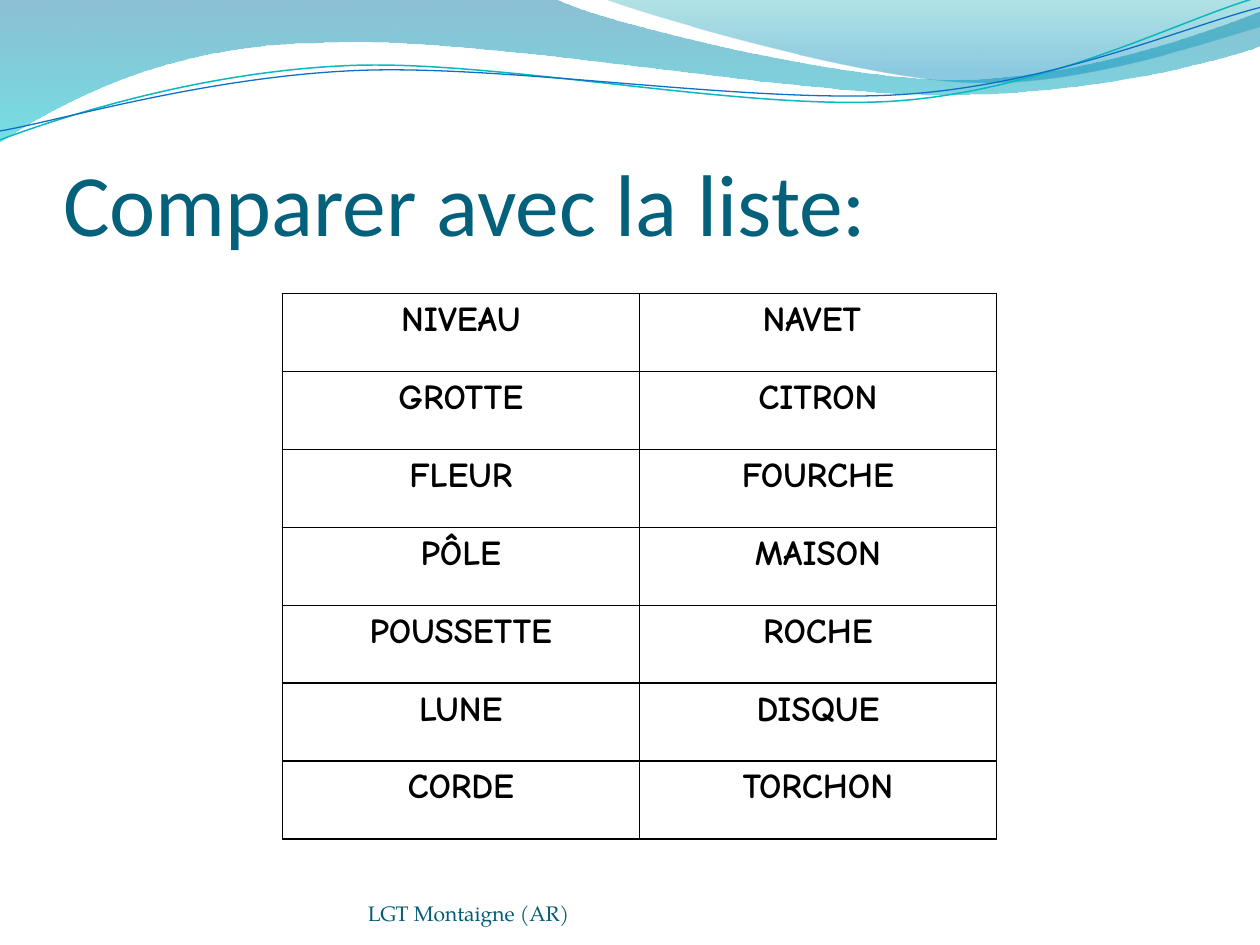
from math import cos, radians, sin

from lxml.etree import SubElement
from pptx import Presentation
from pptx.dml.color import RGBColor
from pptx.enum.text import MSO_ANCHOR, MSO_AUTO_SIZE, PP_ALIGN
from pptx.oxml.ns import qn
from pptx.util import Inches, Pt

BLACK = RGBColor(0, 0, 0)
TITLE_INK = RGBColor(0x04, 0x61, 0x7B)
FOOT_INK = RGBColor(0x04, 0x5D, 0x75)
BLUE = RGBColor(0x00, 0x74, 0xA1)
CYAN = RGBColor(0x00, 0xC6, 0xCF)
TEAL = RGBColor(0x00, 0xA1, 0xA9)
SKY = RGBColor(0x00, 0x8B, 0xBF)
AQUA = RGBColor(0x0A, 0xB8, 0xBF)
ROYAL = RGBColor(0x0F, 0x6F, 0xC6)

TITLE = "Comparer avec la liste:"
FOOTER = "LGT Montaigne (AR)"
WORDS = [
    ("NIVEAU", "NAVET "),
    ("GROTTE", "CITRON"),
    ("FLEUR", "FOURCHE"),
    ("PÔLE", "MAISON"),
    ("POUSSETTE", "ROCHE"),
    ("LUNE", "DISQUE"),
    ("CORDE", "TORCHON"),
]

# Each path is a start point, then line ends (2 numbers) or curves (6 numbers).
# Each gradient stop is position, colour, opacity in percent.
WAVES = [
    ([(0, -0.01), (4.4, -0.01), (4.76, 0.17, 6.64, 0.63, 7.58, 0.63),
      (8.53, 0.63, 9.58, 0.26, 10, 0.09), (10.01, 0.36),
      (9.83, 0.44, 8.7, 0.76, 7.46, 0.75), (6.22, 0.75, 3.82, 0.28, 2.57, 0.34),
      (1.29, 0.35, 0.46, 0.83, -0.01, 1.13), (0, -0.01)],
     [(0, BLUE, 45), (1, CYAN, 55)]),
    ([(4.79, -0.01), (5.09, 0.11, 6.82, 0.62, 7.69, 0.65),
      (8.56, 0.69, 9.61, 0.32, 10, 0.21), (10, 0), (4.79, -0.01)],
     [(0, TEAL, 30), (0.8, SKY, 45)]),
]
# Path, centre of its turned frame, colour, width.
STROKES = [
    ([(0, 1.11), (0.48, 0.93, 1.58, 0.57, 2.77, 0.52),
      (3.95, 0.47, 5.93, 0.89, 7.13, 0.8), (8.33, 0.71, 9.38, 0.15, 9.98, -0.02)],
     (4.99, 0.58), AQUA, 0.85),
    ([(0, 1.04), (0.47, 0.96, 1.64, 0.61, 2.83, 0.56),
      (4.03, 0.51, 5.97, 0.83, 7.17, 0.75), (8.36, 0.67, 9.41, 0.21, 10, 0.06)],
     (5, 0.59), ROYAL, 0.75),
]
TILT = 2.7


def pairs(seg):
    return list(zip(seg[::2], seg[1::2]))


def turn(path, mid):
    """Turn a path clockwise by TILT degrees about mid."""
    c, s = cos(radians(TILT)), sin(radians(TILT))
    result = []
    for seg in path:
        moved = []
        for x, y in pairs(seg):
            dx, dy = x - mid[0], y - mid[1]
            moved += [mid[0] + dx * c - dy * s, mid[1] + dx * s + dy * c]
        result.append(moved)
    return result


def draw(shapes, path, close):
    """Build the outline from lines, then join each curve's three points."""
    points = [(Inches(x), Inches(y)) for seg in path for x, y in pairs(seg)]
    pen = shapes.build_freeform(*points[0])
    pen.add_line_segments(points[1:], close=close)
    shape = pen.convert_to_shape()
    shape.shadow.inherit = False
    lines = iter(list(shape.element.spPr.iter(qn("a:lnTo"))))
    for seg in path[1:]:
        first = next(lines)
        if len(seg) == 6:
            first.tag = qn("a:cubicBezTo")
            for _ in range(2):
                other = next(lines)
                first.append(other[0])
                other.getparent().remove(other)
    return shape


def add_wave(shapes, path, stops):
    wave = draw(shapes, path, True)
    wave.line.fill.background()
    wave.fill.gradient()
    wave.fill.gradient_angle = 270
    for stop, (place, color, alpha) in zip(wave.fill.gradient_stops, stops):
        stop.position = place
        stop.color.rgb = color
    tints = wave.element.spPr.iter(qn("a:srgbClr"))
    for tint, (_, _, alpha) in zip(tints, stops):
        SubElement(tint, qn("a:alpha"), val=str(alpha * 1000))


def add_stroke(shapes, path, mid, color, width):
    curve = draw(shapes, turn(path, mid), False)
    curve.rotation = 360 - TILT
    curve.fill.background()
    curve.line.color.rgb = color
    curve.line.width = Pt(width)


def set_frame(frame, top=0):
    frame.word_wrap = True
    frame.auto_size = MSO_AUTO_SIZE.NONE
    frame.vertical_anchor = MSO_ANCHOR.BOTTOM
    frame.margin_left = frame.margin_right = frame.margin_bottom = 0
    frame.margin_top = Inches(top)


def set_font(par, name, size, color, bold=False):
    font = par.font
    font.name, font.size, font.bold = name, Pt(size), bold
    font.color.rgb = color


def add_border(cell):
    props = cell._tc.get_or_add_tcPr()
    for i, side in enumerate(("lnL", "lnR", "lnT", "lnB")):
        line = props.makeelement(qn("a:" + side), {"w": str(Pt(1))})
        fill = SubElement(line, qn("a:solidFill"))
        SubElement(fill, qn("a:srgbClr"), val=str(BLACK))
        props.insert(i, line)


def add_words(shapes):
    rows, cols = len(WORDS), len(WORDS[0])
    table = shapes.add_table(rows, cols, Inches(2.24), Inches(2.33),
                             Inches(5.67), Inches(4.33)).table
    table.first_row = table.horz_banding = False
    for r, row in enumerate(WORDS):
        for c, word in enumerate(row):
            cell = table.cell(r, c)
            cell.text = word
            cell.fill.background()
            par = cell.text_frame.paragraphs[0]
            par.alignment = PP_ALIGN.CENTER
            set_font(par, "Comic Neue", 20, BLACK, True)
            add_border(cell)


def main():
    deck = Presentation()
    deck.slide_width, deck.slide_height = Inches(10), Inches(7.5)
    shapes = deck.slides.add_slide(deck.slide_layouts[5]).shapes

    for wave in WAVES:
        add_wave(shapes, *wave)
    for stroke in STROKES:
        add_stroke(shapes, *stroke)

    title = shapes.title
    title.left, title.top = Inches(0.5), Inches(0.77)
    title.width, title.height = Inches(9), Inches(1.25)
    title.text = TITLE
    set_frame(title.text_frame, 0.05)
    par = title.text_frame.paragraphs[0]
    par.alignment = PP_ALIGN.LEFT
    set_font(par, "Calibri", 50, TITLE_INK)

    add_words(shapes)

    foot = shapes.add_textbox(Inches(2.92), Inches(6.95), Inches(3.67), Inches(0.4))
    foot.text_frame.text = FOOTER
    set_frame(foot.text_frame)
    set_font(foot.text_frame.paragraphs[0], "TeX Gyre Pagella", 12, FOOT_INK)

    deck.save("out.pptx")


if __name__ == "__main__":
    main()
